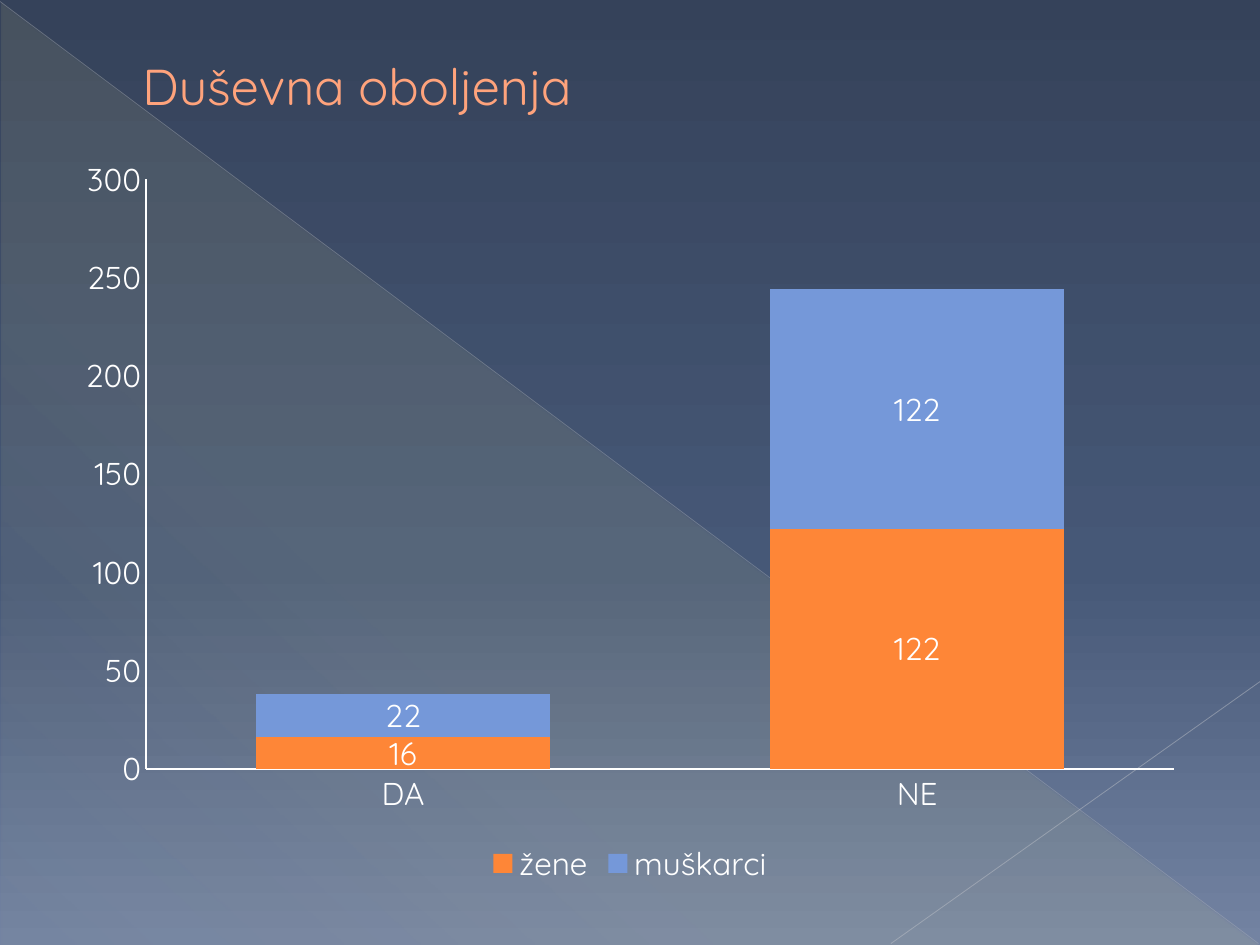
from lxml.etree import SubElement
from pptx import Presentation
from pptx.chart.data import CategoryChartData
from pptx.dml.color import RGBColor
from pptx.enum.chart import XL_CHART_TYPE, XL_LEGEND_POSITION, XL_TICK_MARK
from pptx.enum.shapes import MSO_CONNECTOR, MSO_SHAPE
from pptx.enum.text import MSO_ANCHOR
from pptx.oxml.ns import qn
from pptx.util import Cm, Pt


def color(hex_string):
    return RGBColor.from_string(hex_string)


def set_gradient(fill, element, stops, angle):
    """Fill with (position %, colour, opacity %) stops; the angle runs clockwise."""
    fill.gradient()
    gradient = element.find(".//" + qn("a:gradFill"))
    stop_list = gradient.find(qn("a:gsLst"))
    for old_stop in list(stop_list):
        stop_list.remove(old_stop)
    for position, hex_string, opacity in stops:
        stop = SubElement(stop_list, qn("a:gs"), pos=str(position * 1000))
        stop_color = SubElement(stop, qn("a:srgbClr"), val=hex_string)
        if opacity < 100:
            SubElement(stop_color, qn("a:alpha"), val=str(opacity * 1000))
    gradient.find(qn("a:lin")).set("ang", str(angle * 60000))


presentation = Presentation()
presentation.slide_width = Cm(25.4)
presentation.slide_height = Cm(19.05)
slide = presentation.slides.add_slide(presentation.slide_layouts[6])

# Background and decoration
set_gradient(slide.background.fill, slide.element,
             [(0, "35425A", 100), (60, "465877", 100), (100, "7383A2", 100)], 90)

triangle = slide.shapes.add_shape(
    MSO_SHAPE.RIGHT_TRIANGLE, Cm(0.03), Cm(0.05), Cm(25.35), Cm(19))
triangle.shadow.inherit = False
triangle.line.fill.background()
set_gradient(triangle.fill, triangle.element,
             [(0, "FFF39D", 10), (70, "FFF39D", 8), (100, "FFF39D", 1)], 133)

for start_x, start_y, end_x, end_y, hex_string, width, opacity in [
    (0, 0.03, 25.37, 19.02, "BABDC4", 0.39, 35),
    (25.4, 13.74, 17.96, 19.02, "C1C4CA", 0.47, 45),
]:
    line = slide.shapes.add_connector(
        MSO_CONNECTOR.STRAIGHT, Cm(start_x), Cm(start_y), Cm(end_x), Cm(end_y))
    line.line.color.rgb = color(hex_string)
    line.line.width = Pt(width)
    line_color = line.element.find(".//" + qn("a:srgbClr"))
    SubElement(line_color, qn("a:alpha"), val=str(opacity * 1000))
    SubElement(line.element.spPr, qn("a:effectLst"))

# Title
title = slide.shapes.add_textbox(Cm(1.27), Cm(0.74), Cm(11.43), Cm(1.98))
title.text_frame.word_wrap = True
title.text_frame.vertical_anchor = MSO_ANCHOR.MIDDLE
title.text_frame.margin_left = Cm(1.6)
paragraph = title.text_frame.paragraphs[0]
paragraph.text = "Duševna oboljenja"
paragraph.font.name = "Quicksand"
paragraph.font.size = Pt(28.8)
paragraph.font.color.rgb = color("FFA37C")

# Stacked column chart
chart_data = CategoryChartData()
chart_data.categories = ["DA", "NE"]
chart_data.add_series("žene", [16, 122])
chart_data.add_series("muškarci", [22, 122])
chart = slide.shapes.add_chart(
    XL_CHART_TYPE.COLUMN_STACKED, Cm(1.27), Cm(2.92), Cm(22.86), Cm(15.01),
    chart_data).chart
chart.has_title = False
chart.font.name = "Quicksand"
chart.font.size = Pt(18)
chart.font.color.rgb = color("FFFFFF")
chart.has_legend = True
chart.legend.position = XL_LEGEND_POSITION.BOTTOM
chart.legend.include_in_layout = False

for axis in (chart.category_axis, chart.value_axis):
    axis.has_major_gridlines = False
    axis.major_tick_mark = XL_TICK_MARK.NONE
    axis.minor_tick_mark = XL_TICK_MARK.NONE
    axis.format.line.color.rgb = color("FFFFFF")
    axis.format.line.width = Pt(1)
chart.value_axis.minimum_scale = 0
chart.value_axis.maximum_scale = 300
chart.value_axis.major_unit = 50

plot = chart.plots[0]
plot.gap_width = 75
plot.overlap = 100
plot.vary_by_categories = False
plot.has_data_labels = True
plot.data_labels.show_value = True
for series, hex_string in zip(plot.series, ["FE8637", "7598D9"]):
    series.format.fill.solid()
    series.format.fill.fore_color.rgb = color(hex_string)

presentation.save("out.pptx")
